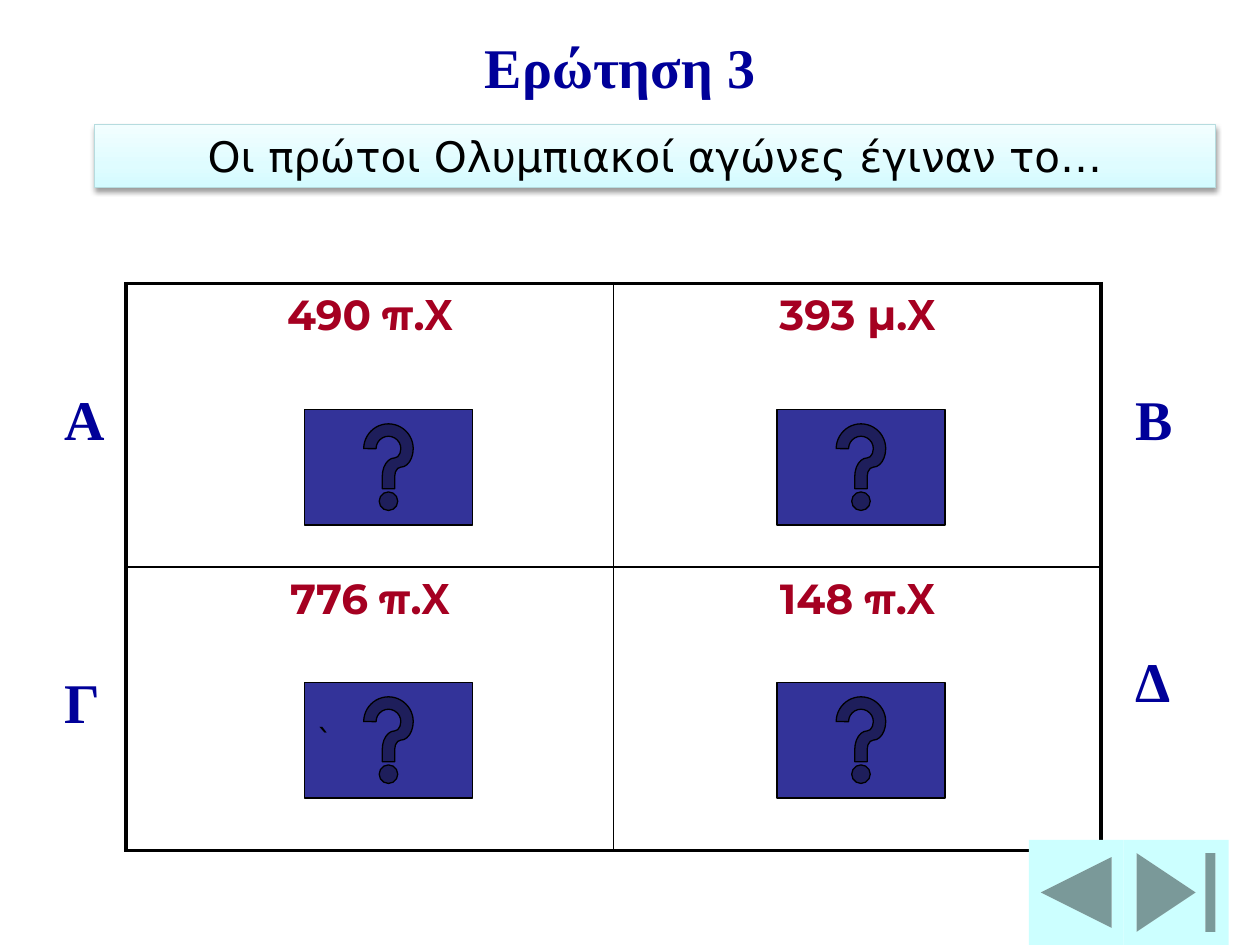
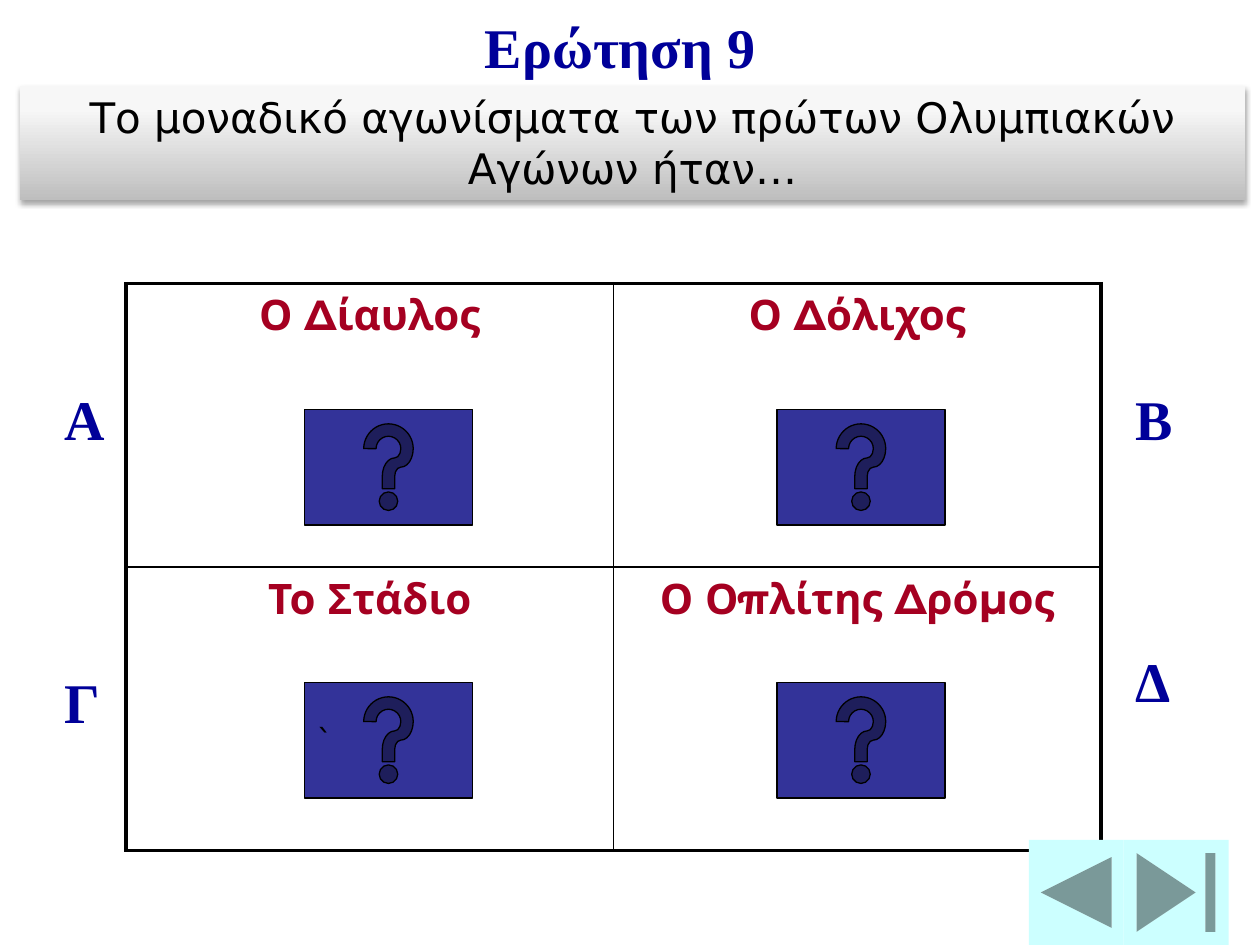
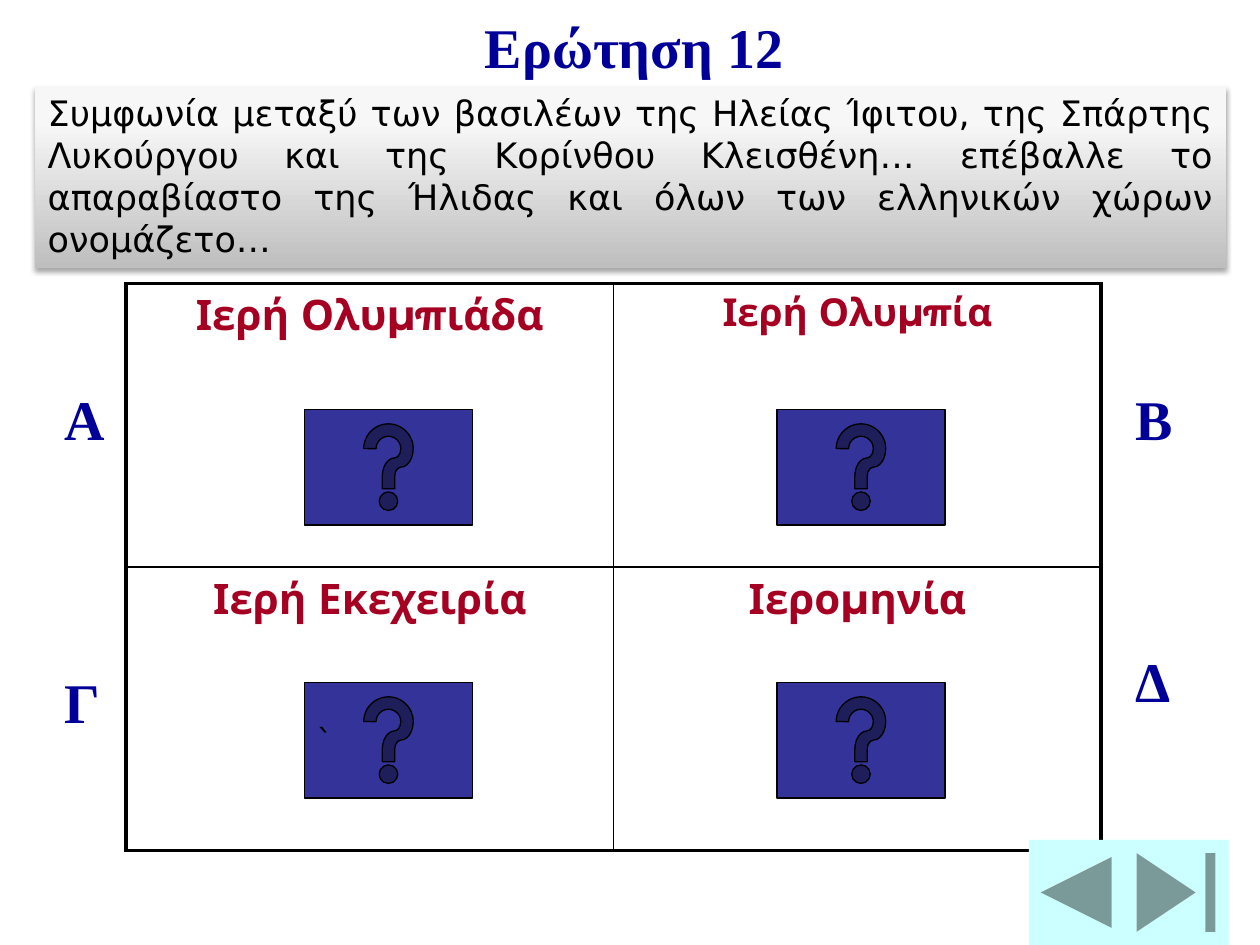
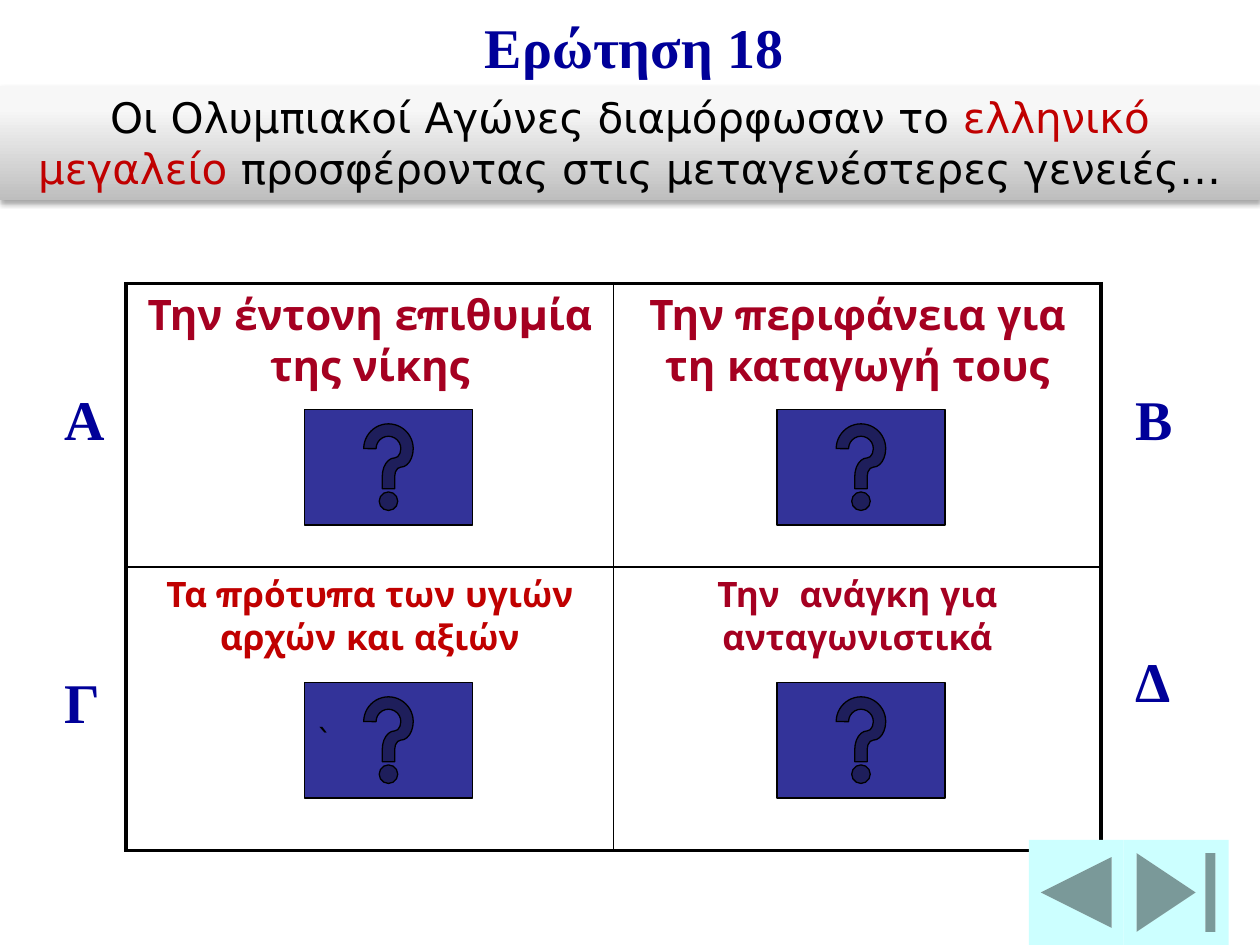
from itertools import product

from pptx import Presentation
from pptx.dml.color import RGBColor
from pptx.enum.shapes import MSO_SHAPE as Kind
from pptx.enum.text import MSO_ANCHOR as Anchor, MSO_AUTO_SIZE as AutoSize, PP_ALIGN as Align
from pptx.oxml import parse_xml
from pptx.oxml.ns import nsdecls
from pptx.util import Inches, Pt

UNIT = Inches(1) // 12
NAVY, CRIMSON, RED, BLACK = "000099", "A50021", "C00000", "000000"
WHITE, INDIGO, AQUA = "FFFFFF", "333399", "CCFFFF"
SERIF, SANS, ANSWER_FONT = "Times New Roman", "DejaVu Sans", "Montserrat"
hue = RGBColor.from_string

ICE = dict(stops=[(0, "D3FBFF"), (35, "DFFCFF"), (100, "F2FEFF")],
           edge="B6DCDF", alpha=38, drop=1.6)
SILVER = dict(stops=[(0, "BEBEBE"), (80, "F7F7F7"), (100, "F8F8F8")],
              edge=None, alpha=35, drop=1.8)


def write(frame, text, size=24, font=SANS, color=BLACK, bold=False,
          align=Align.LEFT, wrap=True, grow=False):
    frame.word_wrap = wrap
    if grow:
        frame.auto_size = AutoSize.SHAPE_TO_FIT_TEXT
    paragraph = frame.paragraphs[0]
    paragraph.alignment = align
    run = paragraph.add_run()
    run.text = text
    run.font.size, run.font.name, run.font.bold = Pt(size), font, bold
    run.font.color.rgb = hue(color)


def draw(slide, kind, left, top, width, height, fill=None, line=None):
    part = slide.shapes.add_shape(kind, left, top, width, height)
    part.shadow.inherit = False
    if fill:
        part.fill.solid()
        part.fill.fore_color.rgb = hue(fill)
    else:
        part.fill.background()
    if line:
        part.line.color.rgb = hue(line)
        part.line.width = Pt(0.75)
    else:
        part.line.fill.background()
    return part


questions = [
    dict(title="Ερώτηση 3", title_top=0.21, banner=(0.75, 0.99, 8.9, 0.5), look=ICE,
         prompt=[("Οι πρώτοι Ολυμπιακοί αγώνες έγιναν το…", BLACK)],
         answers=["490 π.Χ", "393 μ.Χ", "776 π.Χ", "148 π.Χ"]),
    dict(title="Ερώτηση 9", banner=(0.16, 0.68, 9.72, 0.91),
         prompt=[("Το μοναδικό αγωνίσματα των πρώτων Ολυμπιακών Αγώνων ήταν…", BLACK)],
         answers=["Ο Δίαυλος", "Ο Δόλιχος", "Το Στάδιο", "Ο Οπλίτης Δρόμος"]),
    dict(title="Ερώτηση 12", banner=(0.28, 0.68, 9.45, 1.45),
         prompt=[("Συμφωνία μεταξύ των βασιλέων της Ηλείας Ίφιτου, της Σπάρτης "
                  "Λυκούργου και της Κορίνθου Κλεισθένη… επέβαλλε το απαραβίαστο "
                  "της Ήλιδας και όλων των ελληνικών χώρων ονομάζετο…", BLACK)],
         prompt_size=20, prompt_align=Align.JUSTIFY,
         answers=["Ιερή Ολυμπιάδα", "Ιερή Ολυμπία", "Ιερή Εκεχειρία", "Ιερομηνία"],
         sizes=[24, 22, 24, 24]),
    dict(title="Ερώτηση 18", banner=(0, 0.68, 10, 0.91),
         prompt=[("Οι Ολυμπιακοί Αγώνες διαμόρφωσαν το ", BLACK),
                 ("ελληνικό μεγαλείο ", RED),
                 ("προσφέροντας στις μεταγενέστερες γενειές…", BLACK)],
         answers=["Την έντονη επιθυμία της νίκης",
                  "Την περιφάνεια για τη καταγωγή τους",
                  "Τα πρότυπα των υγιών αρχών και αξιών",
                  "Την  ανάγκη για ανταγωνιστικά"],
         sizes=[24, 24, 20, 20], colors=[CRIMSON, CRIMSON, RED, CRIMSON]),
]
letters = [("Α", 5, 36), ("Γ", 5, 63), ("Β", 107, 36), ("Δ", 107, 61)]
navigation = [(Kind.ACTION_BUTTON_END, 107, 10),
              (Kind.ACTION_BUTTON_BACK_OR_PREVIOUS, 98, 9)]

deck = Presentation()
deck.slide_width, deck.slide_height = 120 * UNIT, 90 * UNIT

for question in questions:
    slide = deck.slides.add_slide(deck.slide_layouts[6])

    answers = slide.shapes.add_table(2, 2, 12 * UNIT, 27 * UNIT,
                                     Inches(7.74), 54 * UNIT).table
    answers.first_row = answers.horz_banding = False
    sizes = question.get("sizes", [24] * 4)
    colors = question.get("colors", [CRIMSON] * 4)
    for i, (row, column) in enumerate(product(range(2), repeat=2)):
        cell = answers.cell(row, column)
        outer = dict(L=column == 0, R=column == 1, T=row == 0, B=row == 1)
        for side, is_outer in outer.items():
            cell._tc.get_or_add_tcPr().append(parse_xml(
                f'<a:ln{side} {nsdecls("a")} w="{Pt(2.25 if is_outer else 1)}">'
                f'<a:solidFill><a:srgbClr val="{BLACK}"/></a:solidFill></a:ln{side}>'))
        cell.fill.solid()
        cell.fill.fore_color.rgb = hue(WHITE)
        write(cell.text_frame, question["answers"][i], size=sizes[i], font=ANSWER_FONT,
              color=colors[i], bold=True, align=Align.CENTER)

    title_top = Inches(question.get("title_top", 0.05))
    headings = [(text, x * UNIT, y * UNIT, 6 * UNIT) for text, x, y in letters]
    headings.append((question["title"], 45 * UNIT, title_top, 32 * UNIT))
    for text, left, top, width in headings:
        heading = slide.shapes.add_textbox(left, top, width, Inches(0.63))
        write(heading.text_frame, text, size=32, font=SERIF, color=NAVY,
              bold=True, grow=True)

    for x, y in product((29, 74), (39, 65)):
        button = draw(slide, Kind.ACTION_BUTTON_HELP, x * UNIT, y * UNIT,
                      16 * UNIT, 11 * UNIT, fill=INDIGO, line=BLACK)
        if (x, y) == (29, 65):
            button.text_frame.vertical_anchor = Anchor.MIDDLE
            write(button.text_frame, "`", size=18, wrap=False)

    for kind, x, width in navigation:
        draw(slide, kind, x * UNIT, 80 * UNIT, width * UNIT, 10 * UNIT, fill=AQUA)

    look = question.get("look", SILVER)
    banner = draw(slide, Kind.RECTANGLE, *map(Inches, question["banner"]), line=look["edge"])
    properties = banner._element.spPr
    stops = "".join(f'<a:gs pos="{share * 1000}"><a:srgbClr val="{color}"/></a:gs>'
                    for share, color in look["stops"])
    properties.replace(properties.find("{*}noFill"), parse_xml(
        f'<a:gradFill {nsdecls("a")} rotWithShape="1"><a:gsLst>{stops}</a:gsLst>'
        '<a:lin ang="16200000" scaled="0"/></a:gradFill>'))
    properties.find("{*}effectLst").append(parse_xml(
        f'<a:outerShdw {nsdecls("a")} blurRad="{Pt(3.1)}" dist="{Pt(look["drop"])}" '
        f'dir="5400000" rotWithShape="0"><a:srgbClr val="{BLACK}">'
        f'<a:alpha val="{look["alpha"] * 1000}"/></a:srgbClr></a:outerShdw>'))
    banner.text_frame.vertical_anchor = Anchor.TOP
    for text, color in question["prompt"]:
        write(banner.text_frame, text, size=question.get("prompt_size", 24), color=color,
              align=question.get("prompt_align", Align.CENTER), grow=True)

deck.save("out.pptx")
